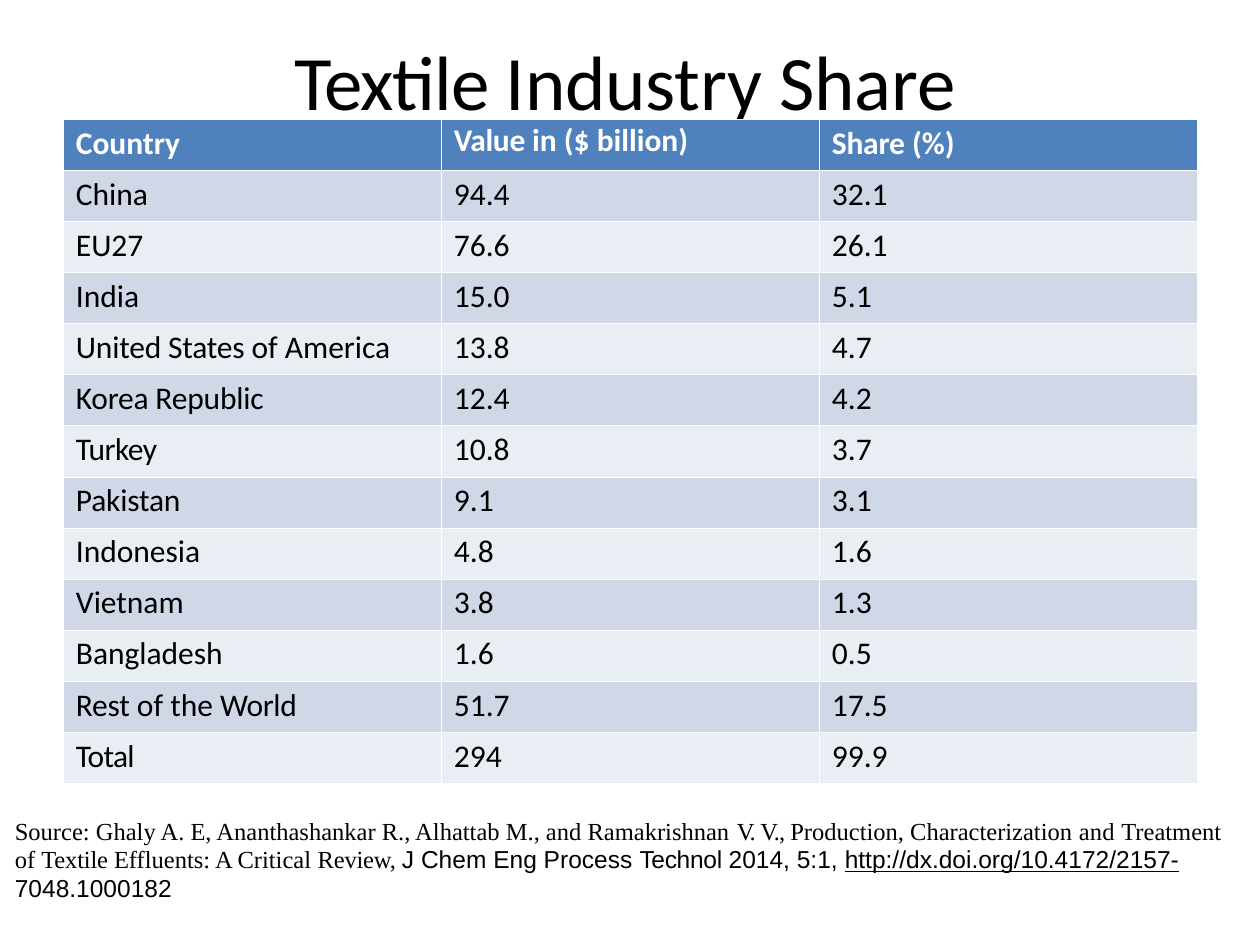
from pptx import Presentation
from pptx import util as u
from pptx.dml.color import RGBColor
from pptx.enum import text
from pptx.oxml import parse_xml
from pptx.oxml.ns import nsdecls

BLACK = RGBColor(0x00, 0x00, 0x00)
WHITE = RGBColor(0xFF, 0xFF, 0xFF)
HEADER_BLUE = RGBColor(0x4F, 0x81, 0xBD)
BAND_DARK = RGBColor(0xD0, 0xD8, 0xE8)
BAND_LIGHT = RGBColor(0xE9, 0xED, 0xF4)

BODY, SERIF, SANS = "Calibri", "Times New Roman", "Arial"

# Plain strings have normal spacing; lists hold (text, letter spacing in points)
HEADER = ["Country",
          [("Value ", -0.2), ("in ($ billion)", 0)],
          [("Share ", -0.1), ("(%)", 0)]]
ROWS = [
    ["China", "94.4", "32.1"],
    ["EU27", "76.6", "26.1"],
    ["India", "15.0", "5.1"],
    [[("United States ", -0.1), ("of America", 0)], "13.8", "4.7"],
    [[("Korea Republic", -0.1)], "12.4", "4.2"],
    [[("Turkey", -0.3)], "10.8", "3.7"],
    [[("Pakistan", -0.1)], "9.1", "3.1"],
    ["Indonesia", "4.8", "1.6"],
    ["Vietnam", "3.8", "1.3"],
    ["Bangladesh", "1.6", "0.5"],
    [[("Rest ", -0.1), ("of the ", 0), ("World", -0.2)], "51.7", "17.5"],
    [[("Total", -0.4)], "294", "99.9"],
]

# Source note: text, letter spacing, font, underline
SOURCE = [
    ("Source: Ghaly A. E, Ananthashankar R., Alhattab M., and Ramakrishnan ", 0, SERIF, False),
    ("V. ", -0.9, SERIF, False),
    ("V., ", -0.6, SERIF, False),
    ("Production, Characterization ", 0, SERIF, False),
    ("and ", 0.1, SERIF, False),
    ("Treatment of ", 0, SERIF, False),
    ("Textile ", -0.1, SERIF, False),
    ("Effluents: A Critical ", 0, SERIF, False),
    ("Review, ", -0.1, SERIF, False),
    ("J Chem Eng Process ", 0, SANS, False),
    ("Technol ", -0.2, SANS, False),
    ("2014, 5:1, ", 0, SANS, False),
    ("http://dx.doi.org/10.4172/2157-", 0, SANS, True),
    (" ", 3.9, SANS, True),
    ("7048.1000182", 0, SANS, False),
]


class SlideBuilder:
    """Holds the text style and the current slide."""

    def __init__(self, deck):
        self.page = deck.slides.add_slide(deck.slide_layouts[5])

    def span(self, para, words, size, spacing=0, font=BODY, color=BLACK,
             bold=False, underline=False):
        span = para.add_run()
        span.text = words
        span.font.name = font
        span.font.size = u.Pt(size)
        span.font.color.rgb = color
        span.font.bold = bold
        span.font.underline = underline
        if spacing:
            span.font._element.set("spc", str(round(spacing * 100)))

    def frame(self, box, place, line_height, top_margin=0):
        box.left, box.top, box.width, box.height = map(u.Cm, place)
        frame = box.text_frame
        frame.word_wrap = True
        frame.auto_size = text.MSO_AUTO_SIZE.NONE
        frame.vertical_anchor = text.MSO_ANCHOR.TOP
        frame.margin_left = frame.margin_right = frame.margin_bottom = 0
        frame.margin_top = u.Cm(top_margin)
        para = frame.paragraphs[0]
        para.alignment = text.PP_ALIGN.LEFT
        para.line_spacing = u.Pt(line_height)
        return para

    def title(self, spans, place):
        para = self.frame(self.page.shapes.title, place, 44.1, top_margin=0.1)
        for words, spacing in spans:
            self.span(para, words, 44, spacing)

    def note(self, spans, place):
        box = self.page.shapes.add_textbox(0, 0, 0, 0)
        para = self.frame(box, place, 16.4)
        for words, spacing, font, underline in spans:
            self.span(para, words, 14, spacing, font, underline=underline)

    def cell(self, cell, content, fill, color, bold, top_margin):
        cell.fill.solid()
        cell.fill.fore_color.rgb = fill
        cell.margin_left = u.Cm(0.25)
        cell.margin_right = cell.margin_bottom = 0
        cell.margin_top = u.Cm(top_margin)
        para = cell.text_frame.paragraphs[0]
        para.line_spacing = u.Pt(18)
        spans = [(content, 0)] if isinstance(content, str) else content
        for words, spacing in spans:
            self.span(para, words, 18, spacing, color=color, bold=bold)
        # Thin white borders go before the fill
        for index, side in enumerate(("lnL", "lnR", "lnT", "lnB")):
            border = parse_xml(
                f'<a:{side} {nsdecls("a")} w="{u.Pt(0.25)}"><a:solidFill>'
                f'<a:srgbClr val="{WHITE}"/></a:solidFill></a:{side}>')
            cell._tc.get_or_add_tcPr().insert(index, border)

    def table(self, header, rows, left, top, column_width, row_height):
        lines = [header] + rows
        table = self.page.shapes.add_table(
            len(lines), len(header), u.Cm(left), u.Cm(top),
            u.Cm(column_width * len(header)), u.Cm(row_height * len(lines))).table
        for column in table.columns:
            column.width = u.Cm(column_width)
        for r, line in enumerate(lines):
            table.rows[r].height = u.Cm(row_height)
            is_header = r == 0
            band = BAND_DARK if r % 2 else BAND_LIGHT
            for c, content in enumerate(line):
                raised = is_header and c == 1
                self.cell(table.cell(r, c), content,
                          HEADER_BLUE if is_header else band,
                          WHITE if is_header else BLACK,
                          is_header, 0.18 if raised else 0.24)


def main():
    deck = Presentation()
    deck.slide_width, deck.slide_height = u.Cm(25.4), u.Cm(19.05)
    builder = SlideBuilder(deck)

    # Title
    builder.title([("Textile ", -0.6), ("Industry Share", -0.1)],
                  (5.94, 0.89, 13.67, 1.7))

    # Country shares
    builder.table(HEADER, ROWS, left=1.28, top=2.4, column_width=7.62, row_height=1.03)

    # Source note
    builder.note(SOURCE, (0.3, 16.46, 24.49, 1.73))

    deck.save("out.pptx")


if __name__ == "__main__":
    main()
